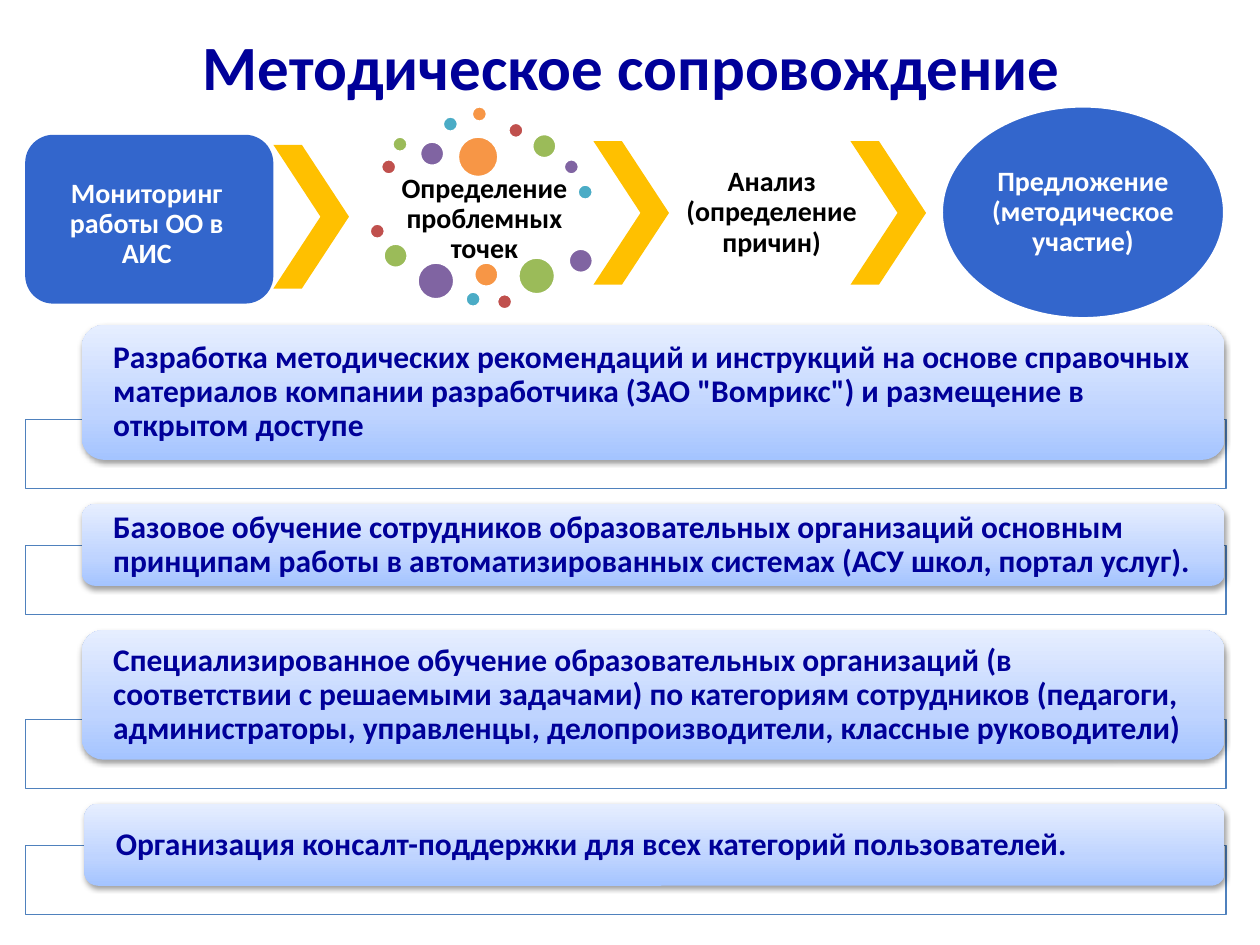
from lxml import etree
from pptx import Presentation
from pptx.dml.color import RGBColor
from pptx.enum import shapes, text
from pptx.oxml import parse_xml
from pptx.oxml.ns import nsdecls
from pptx.util import Inches, Pt

NAVY, BLUE, GOLD, WHITE, BLACK = "000099", "3366CC", "FFC000", "FFFFFF", "000000"
RED, GREEN, PURPLE, TEAL, ORANGE = "C0504D", "9BBB59", "8064A2", "4BACC6", "F79646"
KIND = shapes.MSO_SHAPE

DOTS = [
    (3.02, 1.26, 0.13, RED), (3.11, 1.08, 0.13, GREEN), (3.33, 1.12, 0.2, PURPLE),
    (3.51, 0.92, 0.13, TEAL), (3.74, 0.84, 0.13, ORANGE), (4.03, 0.97, 0.13, RED),
    (4.22, 1.06, 0.2, GREEN), (4.47, 1.26, 0.13, PURPLE), (4.58, 1.46, 0.13, TEAL),
    (3.63, 1.08, 0.33, ORANGE), (2.93, 1.77, 0.13, RED), (3.04, 1.93, 0.2, GREEN),
    (3.31, 2.08, 0.3, PURPLE), (3.69, 2.31, 0.13, TEAL), (3.76, 2.08, 0.2, ORANGE),
    (3.94, 2.33, 0.13, RED), (4.11, 2.04, 0.3, GREEN), (4.51, 1.97, 0.2, PURPLE),
]

MEASURES = [
    (0.65, 1.07, 'Разработка методических рекомендаций и инструкций на основе справочных '
     'материалов компании разработчика (ЗАО "Вомрикс") и размещение в открытом доступе'),
    (0.65, 0.65, 'Базовое обучение сотрудников образовательных организаций основным '
     'принципам работы в автоматизированных системах (АСУ школ, портал услуг).'),
    (0.65, 1.03, 'Специализированное обучение образовательных организаций (в соответствии '
     'с решаемыми задачами) по категориям сотрудников (педагоги, администраторы, '
     'управленцы, делопроизводители, классные руководители)'),
    (0.67, 0.65, 'Организация консалт-поддержки для всех категорий пользователей.'),
]


def color(value):
    """Return the colour for a hex string."""
    return RGBColor.from_string(value)


def write(shape, words, size=16, ink=BLACK, align=text.PP_ALIGN.CENTER, spacing=0.9,
          margins=(0.02, 0.02)):
    """Put bold, vertically centred text into a shape."""
    frame = shape.text_frame
    frame.word_wrap = True
    frame.vertical_anchor = text.MSO_ANCHOR.MIDDLE
    frame.margin_left = frame.margin_right = Inches(margins[0])
    frame.margin_top = frame.margin_bottom = Inches(margins[1])
    paragraph = frame.paragraphs[0]
    paragraph.alignment = align
    paragraph.line_spacing = spacing
    run = paragraph.add_run()
    run.text = words
    run.font.name, run.font.size, run.font.bold = "Calibri", Pt(size), True
    run.font.color.rgb = color(ink)


def add_figure(slide, kind, box, fill=None, line=None, weight=2):
    """Add a flat preset shape."""
    figure = slide.shapes.add_shape(kind, *map(Inches, box))
    figure.shadow.inherit = False
    if fill:
        figure.fill.solid()
        figure.fill.fore_color.rgb = color(fill)
    if line:
        figure.line.color.rgb = color(line)
        figure.line.width = Pt(weight)
    else:
        figure.line.fill.background()
    return figure


def add_caption(slide, box, words, **style):
    """Add a text box with a step's caption."""
    write(slide.shapes.add_textbox(*map(Inches, box)), words, **style)


def add_chevron(slide, left, top):
    """Add a golden chevron between two steps."""
    chevron = add_figure(slide, KIND.CHEVRON, (left, top, 0.6, 1.14), GOLD)
    chevron.adjustments[0] = 0.623


def shade(card):
    """Give a card its three-stop gradient and soft drop shadow."""
    card.fill.gradient()
    properties = card.fill._xPr
    gradient = parse_xml(
        f'<a:gradFill {nsdecls("a")} rotWithShape="1"><a:gsLst>'
        '<a:gs pos="0"><a:srgbClr val="A4C4FF"/></a:gs>'
        '<a:gs pos="35000"><a:srgbClr val="BFD4FF"/></a:gs>'
        '<a:gs pos="100000"><a:srgbClr val="E6EEFF"/></a:gs>'
        '</a:gsLst><a:lin ang="16200000" scaled="1"/></a:gradFill>')
    properties.replace(properties.gradFill, gradient)
    effects = properties.find("{*}effectLst")
    effects.append(etree.fromstring(
        f'<a:outerShdw {nsdecls("a")} blurRad="{Pt(3.1)}" dist="{Pt(1.6)}" dir="5400000" '
        'rotWithShape="0"><a:srgbClr val="000000"><a:alpha val="38000"/></a:srgbClr>'
        '</a:outerShdw>'))


def add_measure(slide, left, top, height, words):
    """Add a measure card over its outlined strip."""
    add_figure(slide, KIND.RECTANGLE, (0.2, top + height - 0.32, 9.53, 0.55),
               WHITE, "4F81BD", 0.75)
    card = add_figure(slide, KIND.ROUNDED_RECTANGLE, (left, top, 9.72 - left, height))
    shade(card)
    write(card, words, size=18, ink=NAVY, align=text.PP_ALIGN.LEFT,
          margins=(0.25 - 0.05 * height, 0))


def add_steps(slide):
    """Add the chain of four steps."""
    add_caption(slide, (3.03, 1.47, 1.63, 0.54), "Определение проблемных точек")
    for left, top, size, fill in DOTS:
        add_figure(slide, KIND.OVAL, (left, top, size, size), fill, WHITE)
    add_caption(slide, (5.31, 1.12, 1.63, 1.14), "Анализ (определение причин)")
    for left, top in ((2.17, 1.15), (4.71, 1.12), (6.75, 1.12)):
        add_chevron(slide, left, top)
    proposal = add_figure(slide, KIND.OVAL, (7.47, 0.84, 2.25, 1.69), BLUE, WHITE)
    write(proposal, "Предложение (методическое участие)", ink=WHITE, margins=(0, 0))
    add_figure(slide, KIND.ROUNDED_RECTANGLE, (0.2, 1.07, 1.97, 1.34), BLUE)
    add_caption(slide, (0.35, 1.23, 1.63, 1.1), "Мониторинг работы ОО в АИС", ink=WHITE)


def main():
    """Build the slide and save it."""
    deck = Presentation()
    deck.slide_width, deck.slide_height = Inches(10), Inches(7.5)
    slide = deck.slides.add_slide(deck.slide_layouts[5])
    heading = slide.shapes.title
    heading.left, heading.top, heading.width, heading.height = map(
        Inches, (0.51, 0.21, 9, 0.61))
    write(heading, "Методическое сопровождение", size=36, ink=NAVY, spacing=1.0,
          margins=(0.1, 0.05))
    add_steps(slide)
    top = 2.58
    for left, height, words in MEASURES:
        add_measure(slide, left, top, height, words)
        top += height + 0.35
    deck.save("out.pptx")


if __name__ == "__main__":
    main()
